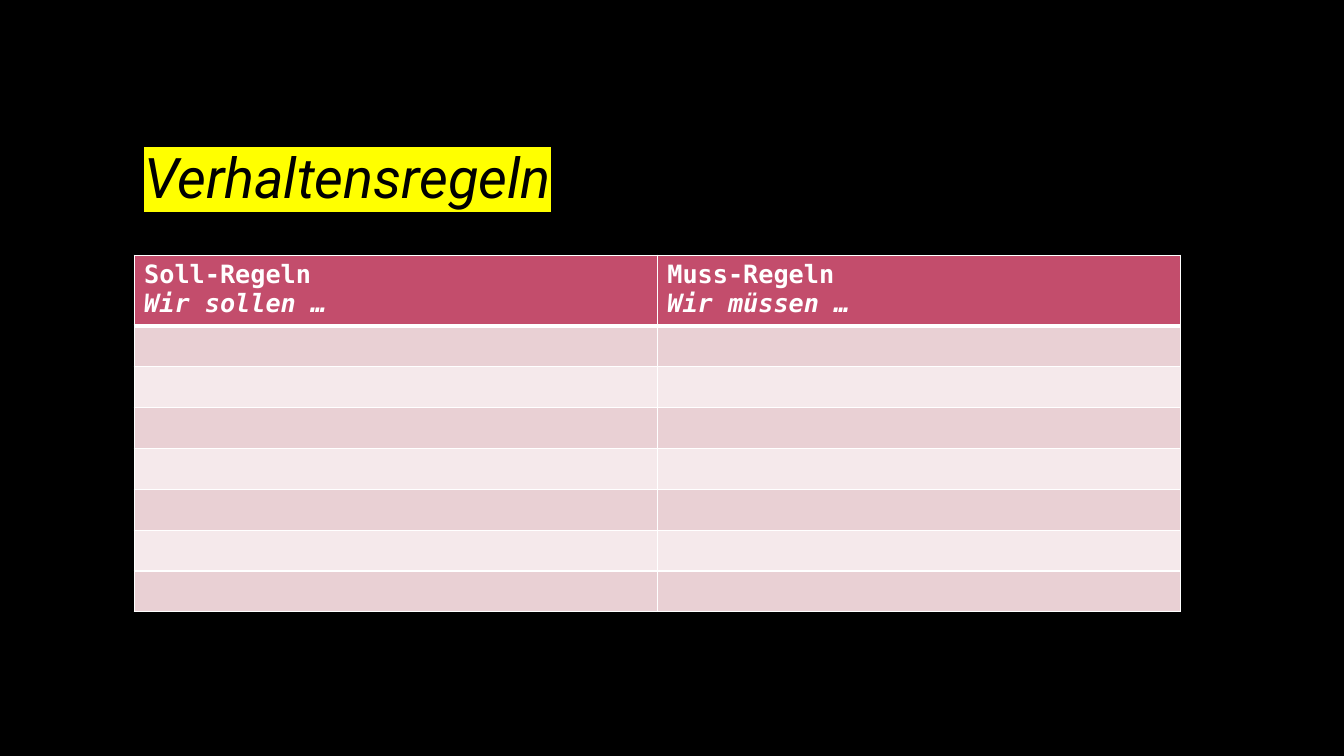
from lxml.etree import SubElement
from pptx import Presentation
from pptx.dml.color import RGBColor
from pptx.enum.text import MSO_ANCHOR
from pptx.oxml.ns import qn
from pptx.util import Cm, Pt

BLACK, WHITE, YELLOW = "000000", "FFFFFF", "FFFF00"
HEADER, BANDS = "C34D6C", ("E9D0D4", "F5E9EB")
RULES = [("Soll-Regeln", "Wir sollen …"), ("Muss-Regeln", "Wir müssen …")]
EMPTY_ROWS = 7
HEADER_HEIGHT, ROW_HEIGHT = 1.73, 1.03


def rgb(value):
    return RGBColor.from_string(value)


def set_font(p, name, size, color, bold=False, italic=False):
    font = p.font
    font.name, font.size, font.bold, font.italic = name, Pt(size), bold, italic
    font.color.rgb = rgb(color)


def highlight(r, color):
    mark = SubElement(r.font._element, qn("a:highlight"))
    SubElement(mark, qn("a:srgbClr"), val=color)


def set_borders(cell, color, bottom=1):
    """Border lines must stand before the fill in the cell properties."""
    tc_pr = cell._tc.get_or_add_tcPr()
    widths = {"a:lnL": 1, "a:lnR": 1, "a:lnT": 1, "a:lnB": bottom}
    for i, (tag, width) in enumerate(widths.items()):
        ln = SubElement(tc_pr, qn(tag), w=str(Pt(width)))
        fill = SubElement(ln, qn("a:solidFill"))
        SubElement(fill, qn("a:srgbClr"), val=color)
        tc_pr.insert(i, ln)


def add_title(s, text, left, top, width, height):
    tf = s.shapes.add_textbox(Cm(left), Cm(top), Cm(width), Cm(height)).text_frame
    tf.word_wrap = True
    tf.vertical_anchor = MSO_ANCHOR.BOTTOM
    p = tf.paragraphs[0]
    p.line_spacing = 1.2
    set_font(p, "Roboto", 40, BLACK, italic=True)
    r = p.add_run()
    r.text = text
    highlight(r, YELLOW)


def fill_cell(cell, color, bottom=1):
    cell.fill.solid()
    cell.fill.fore_color.rgb = rgb(color)
    set_borders(cell, WHITE, bottom)


def add_rules_table(s, left, top, width):
    height = HEADER_HEIGHT + EMPTY_ROWS * ROW_HEIGHT
    table = s.shapes.add_table(EMPTY_ROWS + 1, len(RULES), Cm(left), Cm(top),
                               Cm(width), Cm(height)).table
    for i, row in enumerate(table.rows):
        row.height = Cm(ROW_HEIGHT if i else HEADER_HEIGHT)
        for cell in row.cells:
            if i:
                fill_cell(cell, BANDS[(i - 1) % 2], 1)
            else:
                fill_cell(cell, HEADER, 3)
    for cell, lines in zip(table.rows[0].cells, RULES):
        cell.text = "\n".join(lines)
        for i, p in enumerate(cell.text_frame.paragraphs):
            set_font(p, "DejaVu Sans Mono", 18, WHITE, bold=True, italic=i == 1)


def main():
    prs = Presentation()
    prs.slide_width, prs.slide_height = Cm(33.87), Cm(19.05)
    s = prs.slides.add_slide(prs.slide_layouts[6])
    s.background.fill.solid()
    s.background.fill.fore_color.rgb = rgb(BLACK)
    left, width = 3.38, 26.37
    add_title(s, "Verhaltensregeln", left, 1.02, width, 4.39)
    add_rules_table(s, left, 6.43, width)
    prs.save("out.pptx")


if __name__ == "__main__":
    main()
